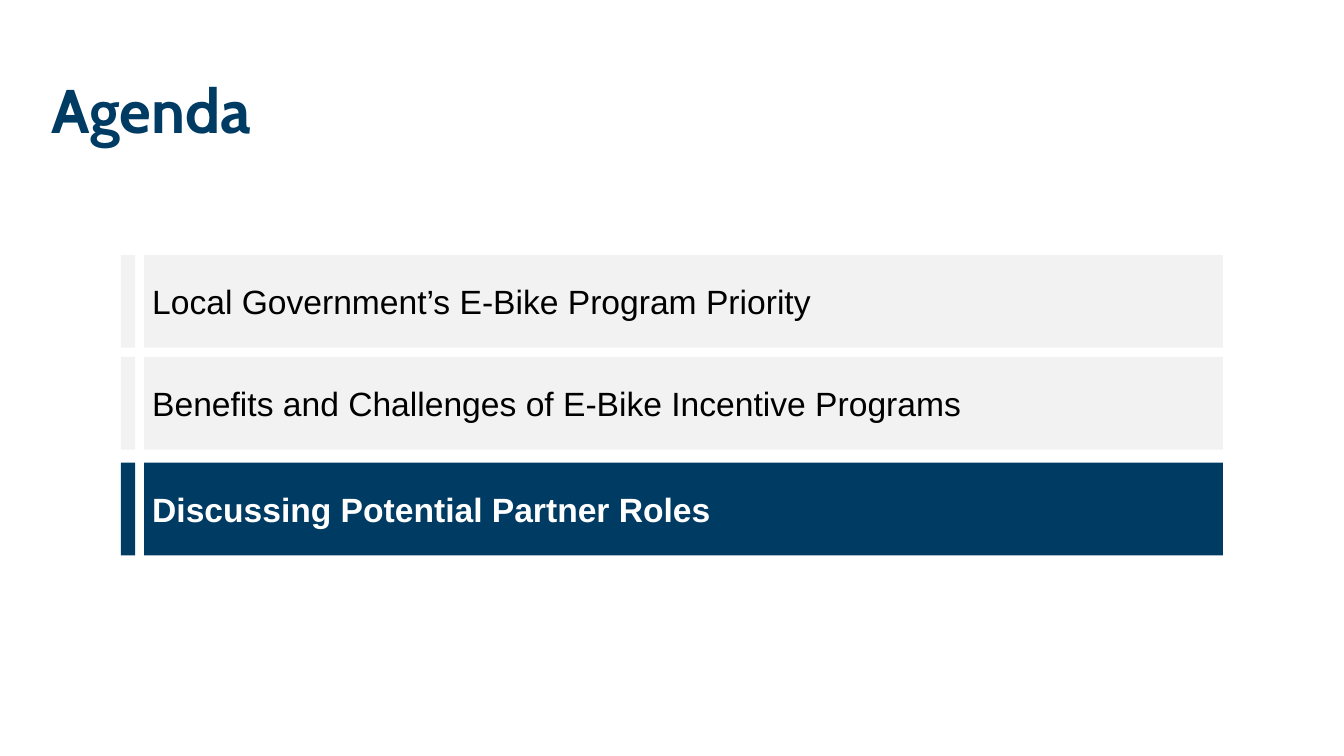
from pptx import Presentation
from pptx.dml.color import RGBColor
from pptx.enum.shapes import MSO_SHAPE
from pptx.enum.text import MSO_ANCHOR, PP_ALIGN
from pptx.util import Emu, Pt

NAVY = "003B63"
GRAY = "F2F2F2"
BLACK = "000000"
WHITE = "FFFFFF"

AGENDA = [
    (253, "Local Government’s E-Bike Program Priority", False),
    (354, "Benefits and Challenges of E-Bike Incentive Programs", False),
    (459, "Discussing Potential Partner Roles", True),
]


def px(length):
    return Emu(length * 9144)


def color(value):
    return RGBColor.from_string(value)


def apply(target, values):
    for name, value in values.items():
        setattr(target, name, value)


def write_text(shape, text, font, font_color, side_inset, end_inset, line_spacing=1.0):
    frame = shape.text_frame
    apply(frame, {
        "word_wrap": True,
        "vertical_anchor": MSO_ANCHOR.MIDDLE,
        "margin_left": px(side_inset),
        "margin_right": px(side_inset),
        "margin_top": px(end_inset),
        "margin_bottom": px(end_inset),
    })
    paragraph = frame.paragraphs[0]
    apply(paragraph, {"alignment": PP_ALIGN.LEFT, "line_spacing": line_spacing})
    run = paragraph.add_run()
    run.text = text
    apply(run.font, font)
    run.font.color.rgb = color(font_color)


def add_title(slide, text):
    title = slide.shapes.add_textbox(px(41), px(40), px(1253), px(145))
    font = {"name": "Cabin", "size": Pt(44), "bold": True}
    write_text(title, text, font, NAVY, 10, 5, 0.9)


def add_bar(slide, left, top, width, fill_color):
    shape = slide.shapes.add_shape(
        MSO_SHAPE.RECTANGLE, px(left), px(top), px(width), px(92))
    shape.shadow.inherit = False
    shape.fill.solid()
    shape.fill.fore_color.rgb = color(fill_color)
    shape.line.fill.background()
    return shape


def add_agenda_item(slide, top, text, current):
    fill_color = NAVY if current else GRAY
    add_bar(slide, 120, top, 14, fill_color)
    bar = add_bar(slide, 143, top, 1070, fill_color)
    font = {"name": "Arial", "size": Pt(24), "bold": current}
    write_text(bar, text, font, WHITE if current else BLACK, 8, 0)


def main():
    presentation = Presentation()
    apply(presentation, {"slide_width": px(1333), "slide_height": px(750)})
    slide = presentation.slides.add_slide(presentation.slide_layouts[6])
    add_title(slide, "Agenda")
    for top, text, current in AGENDA:
        add_agenda_item(slide, top, text, current)
    presentation.save("out.pptx")


if __name__ == "__main__":
    main()
